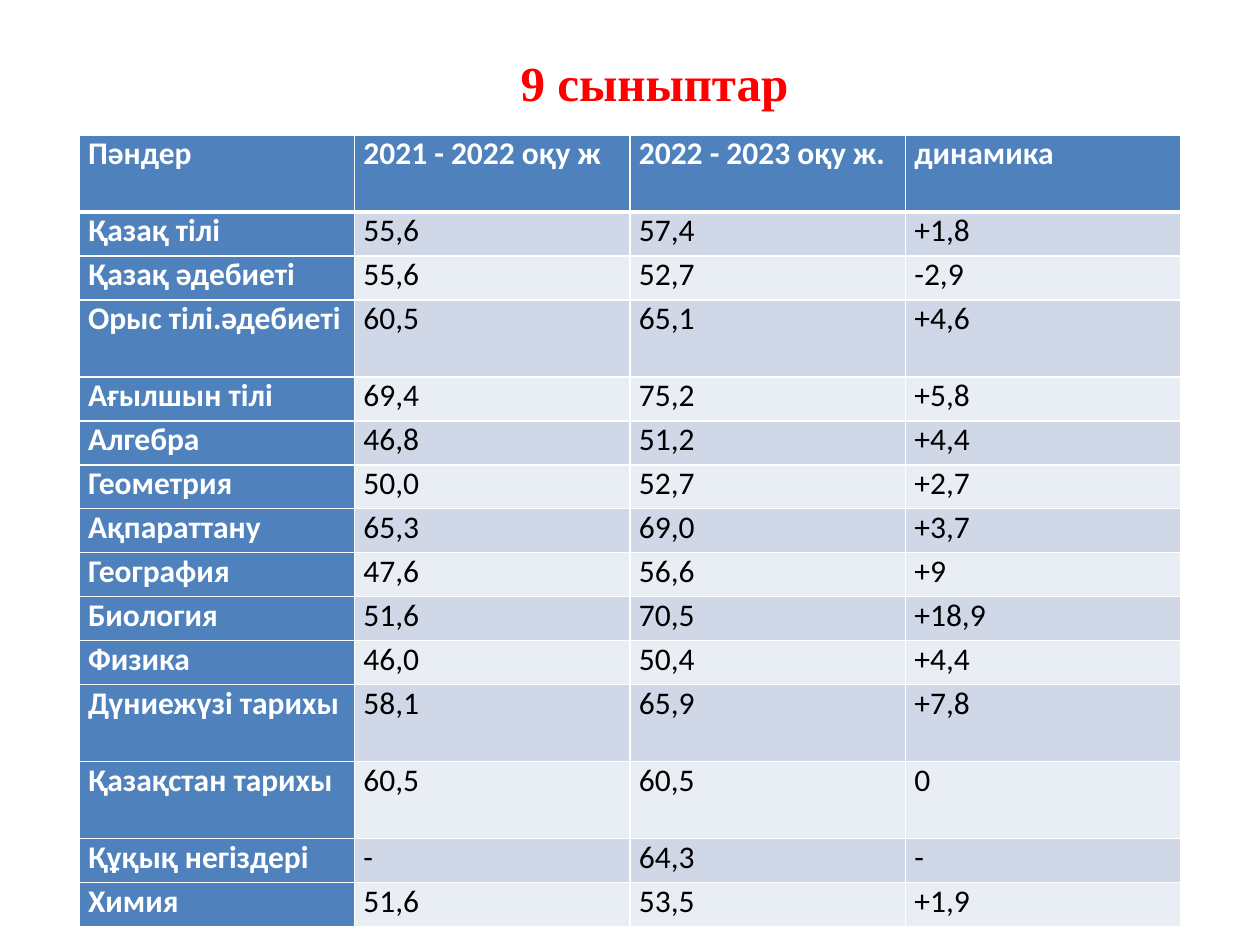
from lxml.etree import SubElement
from pptx import Presentation
from pptx.dml.color import RGBColor
from pptx.enum.shapes import MSO_SHAPE as Shape
from pptx.enum.text import MSO_ANCHOR as Anchor, PP_ALIGN as Align
from pptx.oxml.ns import qn
from pptx.util import Emu, Pt

PX = 914400 // 126
WHITE, BLACK, RED, BLUE = "FFFFFF", "000000", "FF0000", "4F81BD"
BANDS = ["D0D8E8", "E9EDF4"]
SHORT_ROW, TALL_ROW = 44, 77
TALL_SUBJECTS = {"Пәндер", "Орыс тілі.әдебиеті", "Дүниежүзі тарихы", "Қазақстан тарихы"}
SCORES = [
    ("Пәндер", "2021 - 2022 оқу ж", "2022 - 2023 оқу ж.", "динамика"),
    ("Қазақ тілі", "55,6", "57,4", "+1,8"),
    ("Қазақ әдебиеті", "55,6", "52,7", "-2,9"),
    ("Орыс тілі.әдебиеті", "60,5", "65,1", "+4,6"),
    ("Ағылшын тілі", "69,4", "75,2", "+5,8"),
    ("Алгебра", "46,8", "51,2", "+4,4"),
    ("Геометрия", "50,0", "52,7", "+2,7"),
    ("Ақпараттану", "65,3", "69,0", "+3,7"),
    ("География", "47,6", "56,6", "+9"),
    ("Биология", "51,6", "70,5", "+18,9"),
    ("Физика", "46,0", "50,4", "+4,4"),
    ("Дүниежүзі тарихы", "58,1", "65,9", "+7,8"),
    ("Қазақстан тарихы", "60,5", "60,5", "0"),
    ("Құқық негіздері", "-", "64,3", "-"),
    ("Химия", "51,6", "53,5", "+1,9"),
]


def px(length):
    """Turn whole pixels into EMU."""
    return Emu(length * PX)


def color(value):
    """Turn a hex string into a colour."""
    return RGBColor.from_string(value)


def add_run(paragraph, text, font_name, size, font_color, bold):
    """Add one formatted run to a paragraph."""
    run = paragraph.add_run()
    run.text = text
    font = run.font
    font.name, font.size, font.bold = font_name, Pt(size), bold
    font.color.rgb = color(font_color)


def set_borders(cell, top, bottom):
    """Give a cell white borders, with top and bottom widths in points."""
    properties = cell._tc.get_or_add_tcPr()
    for side, width in (("L", 1), ("R", 1), ("T", top), ("B", bottom)):
        line = SubElement(properties, qn(f"a:ln{side}"), w=str(Pt(width)))
        fill = SubElement(line, qn("a:solidFill"))
        SubElement(fill, qn("a:srgbClr"), val=WHITE)


def add_title(slide, left, top, width, height):
    """Place the class heading in its white box."""
    shape = slide.shapes.add_shape(Shape.RECTANGLE, px(left), px(top), px(width), px(height))
    shape.shadow.inherit = False
    shape.fill.solid()
    shape.fill.fore_color.rgb = color(WHITE)
    shape.line.fill.background()
    frame = shape.text_frame
    frame.word_wrap = True
    frame.vertical_anchor = Anchor.MIDDLE
    frame.margin_top, frame.margin_bottom = px(26), px(6)
    paragraph = frame.paragraphs[0]
    paragraph.alignment = Align.CENTER
    add_run(paragraph, "9 сыныптар", "Times New Roman", 28, RED, True)


def fill_cell(cell, text, row, column):
    """Write and style one cell by its place in the table."""
    is_heading = row == 0 or column == 0
    set_borders(cell, 3 if row == 1 else 1, 3 if row == 0 else 1)
    cell.fill.solid()
    cell.fill.fore_color.rgb = color(BLUE if is_heading else BANDS[(row - 1) % 2])
    cell.margin_left = cell.margin_right = px(9)
    cell.margin_top = cell.margin_bottom = 0
    paragraph = cell.text_frame.paragraphs[0]
    paragraph.alignment = Align.JUSTIFY
    add_run(paragraph, text, "Calibri", 18, WHITE if is_heading else BLACK, is_heading)


def add_score_table(slide, left, top, width):
    """Place the table of scores by subject and year."""
    heights = [TALL_ROW if row[0] in TALL_SUBJECTS else SHORT_ROW for row in SCORES]
    columns = len(SCORES[0])
    table = slide.shapes.add_table(
        len(SCORES), columns, px(left), px(top), px(width), px(sum(heights))
    ).table
    for row, (height, texts) in enumerate(zip(heights, SCORES)):
        table.rows[row].height = px(height)
        for column, text in enumerate(texts):
            fill_cell(table.cell(row, column), text, row, column)


def main():
    """Build and save the slide."""
    presentation = Presentation()
    presentation.slide_width, presentation.slide_height = px(1260), px(945)
    slide = presentation.slides.add_slide(presentation.slide_layouts[6])
    add_title(slide, 128, -9, 1053, 161)
    add_score_table(slide, 79, 135, 1102)
    presentation.save("out.pptx")


if __name__ == "__main__":
    main()
